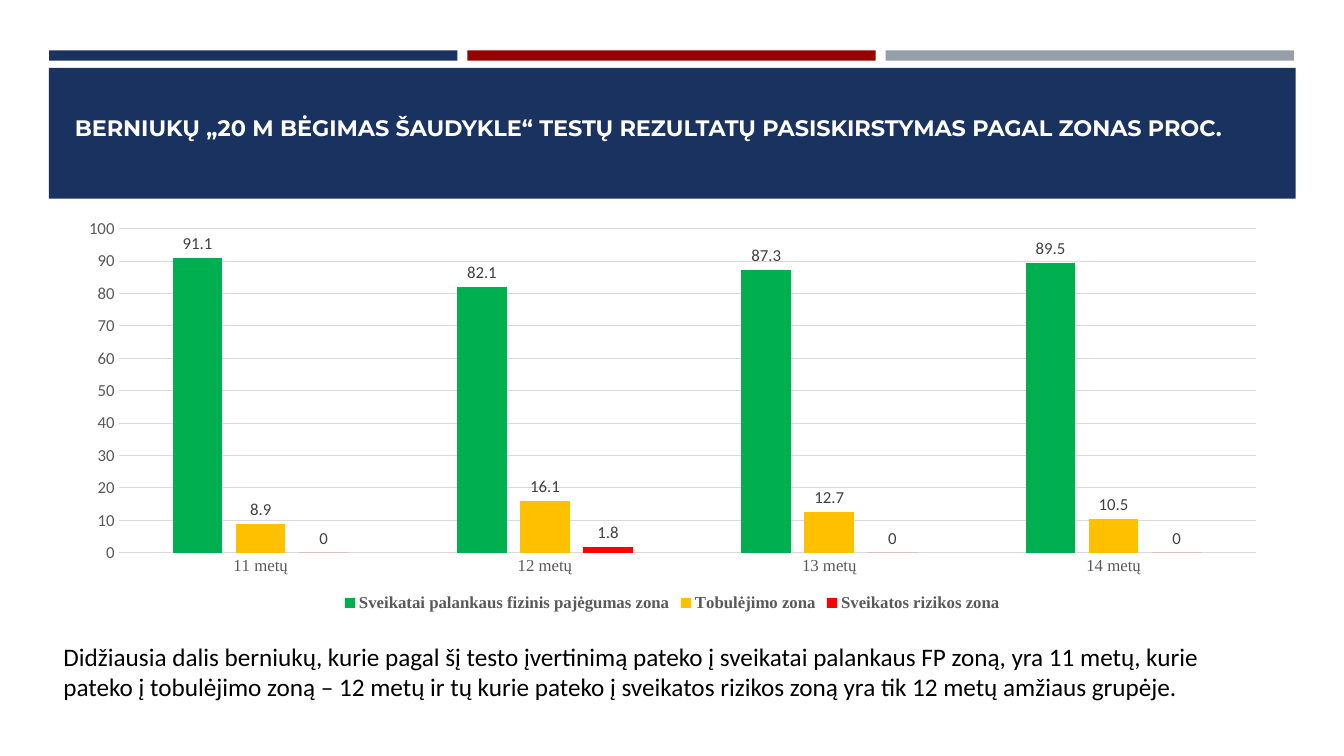
from pptx import Presentation
from pptx import util as u
from pptx.chart.data import CategoryChartData
from pptx.dml.color import RGBColor
from pptx.enum import chart as charts, shapes, text


class Theme:
    navy, red, grey = "1A3260", "990000", "969FA7"
    white, black = "FFFFFF", "000000"
    axis_text, label_text, grid = "595959", "404040", "D9D9D9"
    zones = ("00B050", "FFC000", "FF0000")
    heading_font, body_font, serif_font = "Montserrat", "Calibri", "Times New Roman"
    heading_size, body_size, chart_size = 16, 18, 12
    hairline = 0.75


def rgb(color):
    return RGBColor.from_string(color)


def assign(target, values):
    for name, value in values.items():
        setattr(target, name, value)


def style_font(font, name, size, color, bold=False):
    assign(font, {"name": name, "size": u.Pt(size), "bold": bold})
    font.color.rgb = rgb(color)


class SlideBuilder:
    def __init__(self, deck, theme):
        self.theme = theme
        self.page = deck.slides.add_slide(deck.slide_layouts[5])

    def place(self, shape, left, top, width, height):
        assign(shape, {"left": u.Cm(left), "top": u.Cm(top),
                       "width": u.Cm(width), "height": u.Cm(height)})

    def bar(self, left, top, width, height, color):
        shape = self.page.shapes.add_shape(
            shapes.MSO_SHAPE.RECTANGLE, *map(u.Cm, (left, top, width, height)))
        shape.shadow.inherit = False
        shape.fill.solid()
        shape.fill.fore_color.rgb = rgb(color)
        shape.line.fill.background()

    def fill_text(self, box, wording, anchor, font, bottom=0.13):
        frame = box.text_frame
        assign(frame, {"word_wrap": True, "auto_size": text.MSO_AUTO_SIZE.NONE,
                       "vertical_anchor": anchor, "margin_bottom": u.Cm(bottom)})
        para = frame.paragraphs[0]
        para.alignment = text.PP_ALIGN.LEFT
        span = para.add_run()
        span.text = wording
        style_font(span.font, *font)
        return para

    def title(self, wording, *area):
        box = self.page.shapes.title
        self.place(box, *area)
        box.element.getparent().append(box.element)  # bring in front of the band
        theme = self.theme
        self.fill_text(box, wording, text.MSO_ANCHOR.BOTTOM,
                       (theme.heading_font, theme.heading_size, theme.white, True),
                       bottom=0.81)

    def note(self, wording, *area):
        box = self.page.shapes.add_textbox(*map(u.Cm, area))
        theme = self.theme
        para = self.fill_text(box, wording, text.MSO_ANCHOR.MIDDLE,
                              (theme.body_font, theme.body_size, theme.black))
        assign(para, {"space_before": u.Pt(3.6), "space_after": u.Pt(6)})

    def column_chart(self, categories, series, *area):
        theme = self.theme
        data = CategoryChartData()
        data.categories = categories
        for name, values in series.items():
            data.add_series(name, values)
        chart = self.page.shapes.add_chart(
            charts.XL_CHART_TYPE.COLUMN_CLUSTERED, *map(u.Cm, area), data).chart
        assign(chart, {"has_title": False, "has_legend": True})
        style_font(chart.font, theme.body_font, 10, theme.black)

        # Legend
        assign(chart.legend, {"position": charts.XL_LEGEND_POSITION.BOTTOM,
                              "include_in_layout": False})
        style_font(chart.legend.font, theme.serif_font, theme.chart_size,
                   theme.axis_text, True)

        # Axes
        axes = ((chart.category_axis, theme.serif_font),
                (chart.value_axis, theme.body_font))
        for axis, font in axes:
            assign(axis, {"major_tick_mark": charts.XL_TICK_MARK.NONE,
                          "minor_tick_mark": charts.XL_TICK_MARK.NONE})
            style_font(axis.tick_labels.font, font, theme.chart_size, theme.axis_text)
        assign(chart.value_axis, {"minimum_scale": 0, "maximum_scale": 100,
                                  "major_unit": 10, "has_major_gridlines": True})
        chart.value_axis.format.line.fill.background()
        for line in (chart.category_axis.format.line,
                     chart.value_axis.major_gridlines.format.line):
            line.color.rgb = rgb(theme.grid)
            line.width = u.Pt(theme.hairline)

        # Columns and their values
        plot = chart.plots[0]
        assign(plot, {"gap_width": 219, "overlap": -27, "vary_by_categories": False})
        for column, color in zip(plot.series, theme.zones):
            column.format.fill.solid()
            column.format.fill.fore_color.rgb = rgb(color)
            labels = column.data_labels
            assign(labels, {"show_value": True,
                            "position": charts.XL_LABEL_POSITION.OUTSIDE_END})
            style_font(labels.font, theme.body_font, theme.chart_size, theme.label_text)


def main():
    deck = Presentation()
    assign(deck, {"slide_width": u.Cm(33.87), "slide_height": u.Cm(19.05)})
    theme = Theme()
    slide = SlideBuilder(deck, theme)

    # Three stripes above the title band
    for index, color in enumerate((theme.navy, theme.red, theme.grey)):
        slide.bar(1.24 + index * 10.54, 1.27, 10.29, 0.26, color)
    slide.bar(1.23, 1.71, 31.42, 3.3, theme.navy)
    slide.title("BERNIUKŲ „20 M BĖGIMAS ŠAUDYKLE“ TESTŲ REZULTATŲ "
                "PASISKIRSTYMAS PAGAL ZONAS PROC.", 1.63, 1.55, 30.63, 2.82)

    # Results by age and zone
    slide.column_chart(
        [f"{age} metų" for age in range(11, 15)],
        {"Sveikatai palankaus fizinis pajėgumas zona": (91.1, 82.1, 87.3, 89.5),
         "Tobulėjimo zona": (8.9, 16.1, 12.7, 10.5),
         "Sveikatos rizikos zona": (0, 1.8, 0, 0)},
        1.63, 5.31, 30.63, 10.21)

    # Conclusion
    slide.note("Didžiausia dalis berniukų, kurie pagal šį testo įvertinimą pateko į "
               "sveikatai palankaus FP zoną, yra 11 metų, kurie pateko į tobulėjimo "
               "zoną – 12 metų ir tų kurie pateko į sveikatos rizikos zoną yra tik "
               "12 metų amžiaus grupėje.", 1.35, 15.06, 30.63, 3.73)

    deck.save("out.pptx")


if __name__ == "__main__":
    main()
